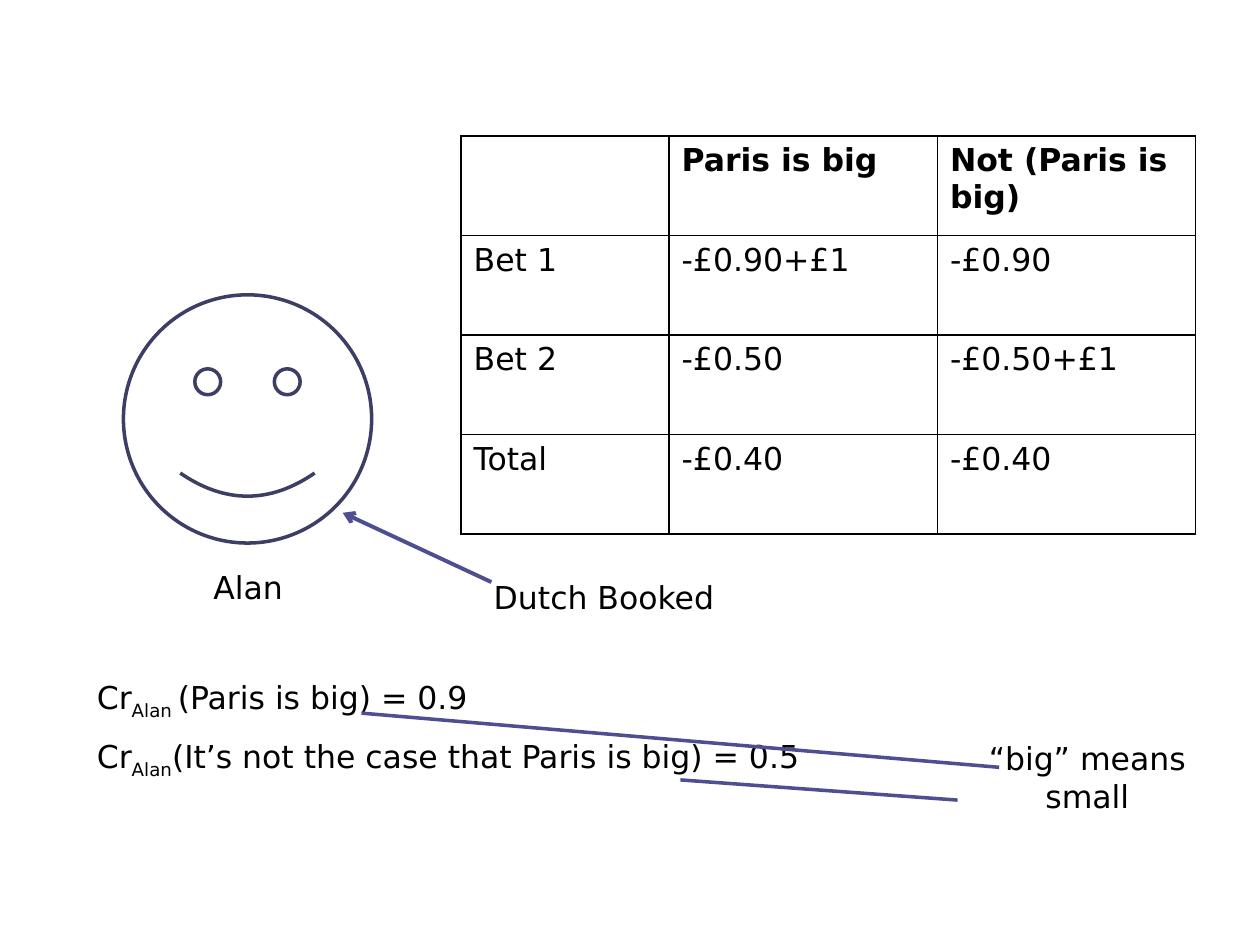
from lxml import etree
from pptx import Presentation
from pptx.dml.color import RGBColor
from pptx.enum import shapes, text
from pptx.oxml.ns import qn
from pptx.util import Inches, Pt

color = RGBColor.from_string
LINE = "4E4F90"


def add_run(paragraph, words, bold=False, subscript=False):
    run = paragraph.add_run()
    run.text = words
    run.font.name = "DejaVu Sans"
    run.font.size = Pt(18)
    run.font.bold = bold
    run.font.color.rgb = color("000000")
    if subscript:
        run.font._element.set("baseline", "-25000")


prs = Presentation()
prs.slide_width, prs.slide_height = Inches(10), Inches(7.5)
slide = prs.slides.add_slide(prs.slide_layouts[6])

# Alan's face
face = slide.shapes.add_shape(shapes.MSO_SHAPE.SMILEY_FACE, Inches(0.98),
                              Inches(2.34), Inches(1.97), Inches(1.97))
face.shadow.inherit = False
face.fill.background()
face.line.color.rgb = color("3D3E66")
face.line.width = Pt(2)

# Captions and credences: place, alignment, (words, subscript) runs
left, center = text.PP_ALIGN.LEFT, text.PP_ALIGN.CENTER
captions = [
    (0.75, 4.46, 2.44, center, [("Alan", False)]),
    (0.67, 5.33, 7.64, left,
     [("Cr", False), ("Alan ", True), ("(Paris is big) = 0.9", False)]),
    (0.67, 5.8, 8.66, left,
     [("Cr", False), ("Alan", True),
      ("(It’s not the case that Paris is big) = 0.5", False)]),
    (3.82, 4.54, 3.15, left, [("Dutch Booked", False)]),
]
for x, y, width, align, runs in captions:
    frame = slide.shapes.add_textbox(Inches(x), Inches(y), Inches(width),
                                     Inches(0.4)).text_frame
    frame.word_wrap = True
    frame.auto_size = text.MSO_AUTO_SIZE.SHAPE_TO_FIT_TEXT
    frame.paragraphs[0].alignment = align
    for words, subscript in runs:
        add_run(frame.paragraphs[0], words, subscript=subscript)

# Table of bets
payoffs = [
    ["", "Paris is big", "Not (Paris is big)"],
    ["Bet 1", "-£0.90+£1", "-£0.90"],
    ["Bet 2", "-£0.50", "-£0.50+£1"],
    ["Total", "-£0.40", "-£0.40"],
]
bets = slide.shapes.add_table(4, 3, Inches(3.66), Inches(1.08),
                              Inches(5.83), Inches(3.17)).table
bets.first_row = bets.horz_banding = False
for column, width in zip(bets.columns, (1.65, 2.13, 2.05)):
    column.width = Inches(width)
for r, row in enumerate(payoffs):
    bets.rows[r].height = Inches(0.79)
    for c, words in enumerate(row):
        cell = bets.cell(r, c)
        cell.fill.background()
        if words:
            add_run(cell.text_frame.paragraphs[0], words, bold=r == 0)
        properties = cell._tc.get_or_add_tcPr()
        for i, side in enumerate(("a:lnL", "a:lnR", "a:lnT", "a:lnB")):
            border = etree.Element(qn(side), w=str(Pt(1)))
            fill = etree.SubElement(border, qn("a:solidFill"))
            etree.SubElement(fill, qn("a:srgbClr"), val="000000")
            properties.insert(i, border)

# Remark on the meaning of "big"
remark = slide.shapes.add_shape(shapes.MSO_SHAPE.RECTANGLE, Inches(7.53),
                                Inches(5.81), Inches(2.2), Inches(0.71))
remark.shadow.inherit = False
remark.fill.solid()
remark.fill.fore_color.rgb = color("FFFFFF")
remark.line.fill.background()
remark.text_frame.word_wrap = True
remark.text_frame.vertical_anchor = text.MSO_ANCHOR.MIDDLE
remark.text_frame.paragraphs[0].alignment = center
add_run(remark.text_frame.paragraphs[0], "“big” means small")

# Pointers: start, end, line width, arrowhead
pointers = [
    (3.9, 4.62, 2.72, 4.07, 2.25, True),
    (7.6, 6.35, 5.4, 6.19, 2, False),
    (7.93, 6.09, 2.87, 5.66, 2, False),
]
for x1, y1, x2, y2, width, arrow in pointers:
    pointer = slide.shapes.add_connector(
        shapes.MSO_CONNECTOR.STRAIGHT,
        Inches(x1), Inches(y1), Inches(x2), Inches(y2))
    pointer.line.color.rgb = color(LINE)
    pointer.line.width = Pt(width)
    if arrow:
        etree.SubElement(pointer.line._get_or_add_ln(), qn("a:tailEnd"),
                         type="arrow")
    etree.SubElement(pointer._element.spPr, qn("a:effectLst"))

prs.save("out.pptx")
